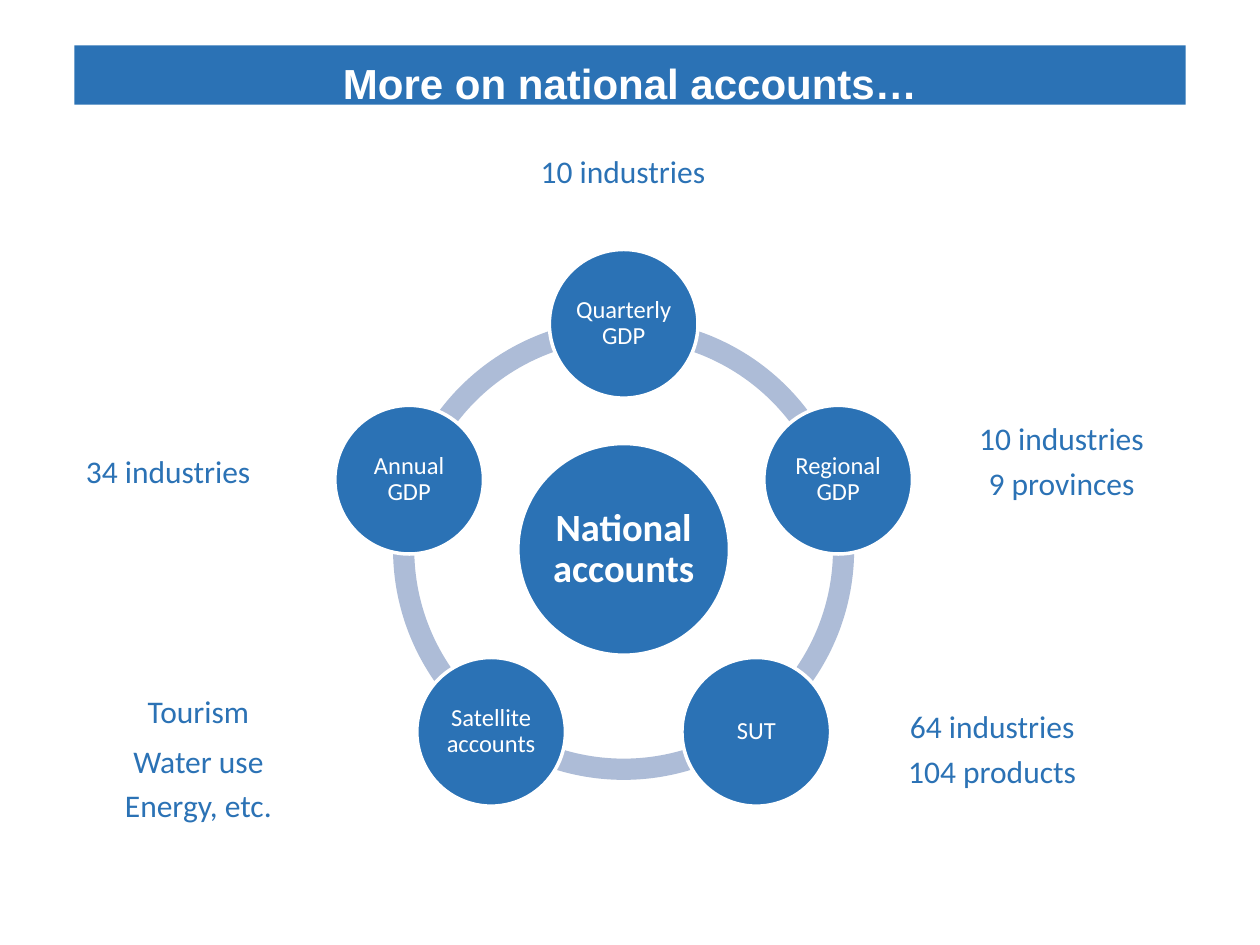
"""Build a slide with a ring of national accounts and their notes."""
from math import cos, radians, sin
from typing import NamedTuple

from pptx import Presentation
from pptx.dml.color import RGBColor as Rgb
from pptx.enum.shapes import MSO_SHAPE as Kind
from pptx.enum.text import MSO_ANCHOR as Anchor, MSO_AUTO_SIZE as Fit, PP_ALIGN as Align
from pptx.util import Inches, Pt

HUES = {"blue": "2B72B5", "pale": "ADBCD7", "white": "FFFFFF"}
MID_X, MID_Y = 4.95, 4.36
RING, ORBIT = 3.66, 1.79
STEP, TOP = 72, 270


class Disc(NamedTuple):
    text: str
    x: float
    y: float
    size: float
    points: int
    inset: float
    bold: bool = False


class Note(NamedTuple):
    lines: tuple[str, ...]
    left: float
    top: float
    gaps: tuple[float, ...]


NODES = ("Quarterly GDP", "Regional GDP", "SUT", "Satellite accounts", "Annual GDP")
NOTES = (
    Note(("10 industries",), 3.96, 0.98, (0.9,)),
    Note(("34 industries",), 0.35, 3.36, (0.9,)),
    Note(("10 industries", "9 provinces"), 7.44, 3.28, (0.9, 0.9)),
    Note(("64 industries", "104 products"), 6.89, 5.56, (0.9, 0.9)),
    Note(("Tourism", "Water use", "Energy, etc."), 0.59, 5.64, (0.9, 1.0, 0.9)),
)


def hue(name: str) -> Rgb:
    return Rgb.from_string(HUES[name])


def paint(shape, name: str) -> None:
    shape.fill.solid()
    shape.fill.fore_color.rgb = hue(name)


def style(para, font: str, points: int, tone: str, bold: bool = False) -> None:
    para.alignment = Align.CENTER
    para.font.name = font
    para.font.size = Pt(points)
    para.font.bold = bold
    para.font.color.rgb = hue(tone)


def frame_up(frame, inset: float) -> None:
    frame.word_wrap = True
    frame.auto_size = Fit.NONE
    frame.vertical_anchor = Anchor.MIDDLE
    frame.margin_left = frame.margin_right = Inches(inset)
    frame.margin_top = frame.margin_bottom = Inches(inset)


def space(para, points: int, gap: float) -> None:
    para.line_spacing = gap
    para.space_after = Pt(round(points * 0.35, 1))


def draw_arc(slide, start: int) -> None:
    arc = slide.shapes.add_shape(
        Kind.BLOCK_ARC, Inches(MID_X - RING / 2), Inches(MID_Y - RING / 2),
        Inches(RING), Inches(RING))
    for i, value in enumerate((start % 360 * 0.6, (start + STEP) % 360 * 0.6, 0.046)):
        arc.adjustments[i] = value
    arc.shadow.inherit = False
    paint(arc, "pale")
    arc.line.fill.background()


def draw_disc(slide, disc: Disc) -> None:
    oval = slide.shapes.add_shape(
        Kind.OVAL, Inches(disc.x - disc.size / 2), Inches(disc.y - disc.size / 2),
        Inches(disc.size), Inches(disc.size))
    oval.shadow.inherit = False
    paint(oval, "blue")
    oval.line.color.rgb = hue("white")
    oval.line.width = Pt(2)
    frame_up(oval.text_frame, disc.inset)
    para = oval.text_frame.paragraphs[0]
    para.text = disc.text
    space(para, disc.points, 0.9)
    style(para, "Calibri", disc.points, "white", disc.bold)


def draw_note(slide, note: Note) -> None:
    box = slide.shapes.add_textbox(
        Inches(note.left), Inches(note.top), Inches(1.97), Inches(0.79))
    frame = box.text_frame
    frame_up(frame, 0.03)
    frame.text = "\n".join(note.lines)
    for para, gap in zip(frame.paragraphs, note.gaps):
        space(para, 18, gap)
        style(para, "Calibri", 18, "blue")


def draw_title(slide, text: str) -> None:
    bar = slide.shapes.title
    bar.left, bar.top = Inches(0.59), Inches(0.36)
    bar.width, bar.height = Inches(8.82), Inches(0.47)
    paint(bar, "blue")
    frame = bar.text_frame
    frame.text = text
    frame.auto_size = Fit.NONE
    frame.vertical_anchor = Anchor.TOP
    frame.margin_top = Inches(0.1)
    frame.margin_bottom = 0
    style(frame.paragraphs[0], "Arial", 24, "white", True)


def main() -> None:
    deck = Presentation()
    deck.slide_width, deck.slide_height = Inches(10), Inches(7.5)
    slide = deck.slides.add_slide(deck.slide_layouts[5])
    draw_title(slide, "More on national accounts…")
    turns = [TOP + STEP * i for i in range(len(NODES))]
    for turn in turns:
        draw_arc(slide, turn)
    draw_disc(slide, Disc("National accounts", MID_X, MID_Y, 1.68, 22, 0.03, True))
    for text, turn in zip(NODES, turns):
        x = MID_X + ORBIT * cos(radians(turn))
        y = MID_Y + ORBIT * sin(radians(turn))
        draw_disc(slide, Disc(text, x, y, 1.18, 14, 0.02))
    for note in NOTES:
        draw_note(slide, note)
    deck.save("out.pptx")


if __name__ == "__main__":
    main()
